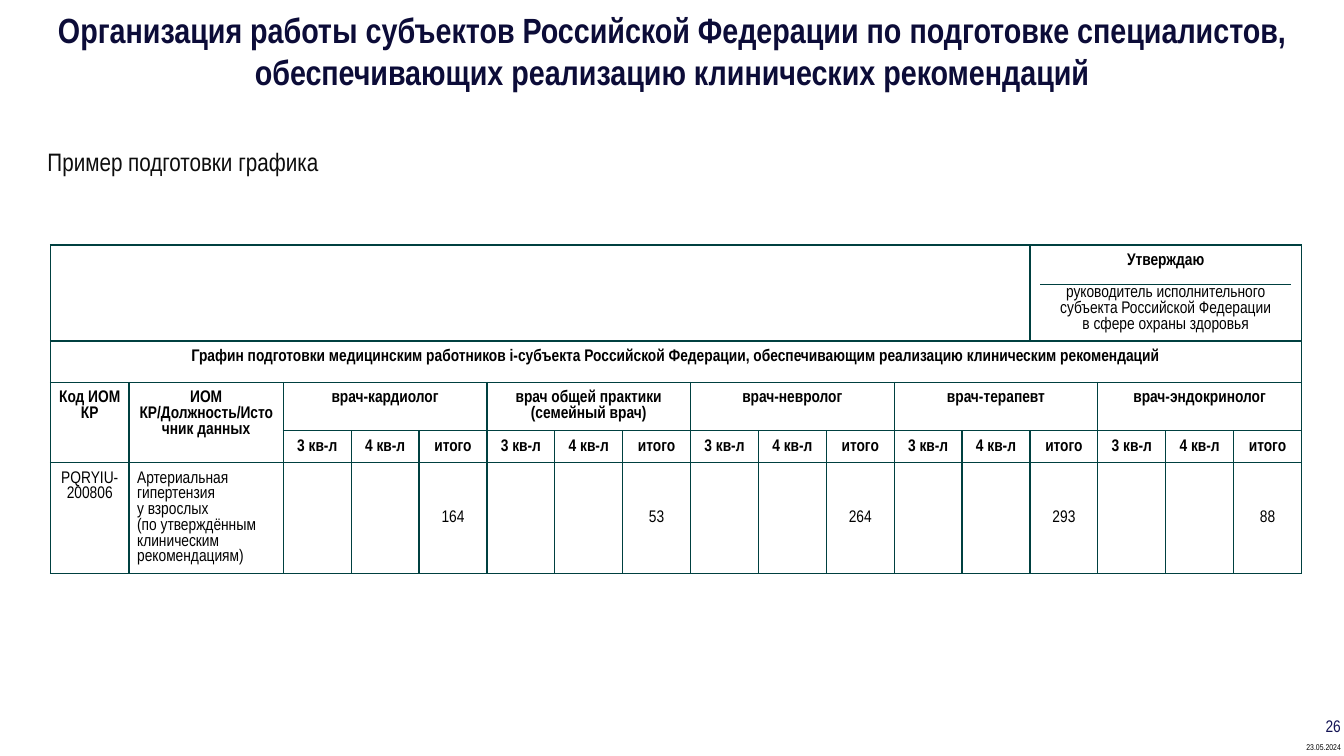
import dataclasses
import typing

import lxml.etree
import pptx
import pptx.dml.color
import pptx.enum.shapes
import pptx.enum.text
import pptx.oxml
import pptx.oxml.ns
import pptx.util

Inches = pptx.util.Inches
Align = pptx.enum.text.PP_ALIGN
Anchor = pptx.enum.text.MSO_ANCHOR

FONT = "Arial Narrow"
COLORS = {
    "title": "0C0C38",
    "subtitle": "0D0D0D",
    "number": "131354",
    "text": "000000",
    "border": "004040",
}
NO_BREAK = chr(160)
INSET = 0.08
TABLE_LEFT, TABLE_TOP, TABLE_WIDTH = 0.5, 2.43, 12.41
LABEL_WIDTHS = [0.78, 1.53]
ROW_HEIGHTS = [0.95, 0.41, 0.48, 0.31, 1.1]
QUARTERS = [f"3{NO_BREAK}кв‑л", f"4{NO_BREAK}кв‑л", "итого"]
APPROVAL_COLUMN = 13


@dataclasses.dataclass
class Specialist:
    name: str
    total: int


@dataclasses.dataclass
class Cell:
    row: int
    column: int
    text: str
    bold: bool = True
    row_span: int = 1
    column_span: int = 1
    align: typing.Any = Align.CENTER
    anchor: typing.Any = Anchor.TOP


@dataclasses.dataclass
class Label:
    text: str
    left: float
    top: float
    width: float
    height: float
    size: float
    color: str
    align: typing.Any
    insets: tuple[float, float, float, float]
    anchor: typing.Any = Anchor.MIDDLE
    bold: bool = False
    wrap: bool = True


SPECIALISTS = [
    Specialist("врач-кардиолог", 164),
    Specialist("врач общей практики (семейный врач)", 53),
    Specialist("врач-невролог", 264),
    Specialist("врач-терапевт", 293),
    Specialist("врач-эндокринолог", 88),
]
COLUMN_COUNT = len(LABEL_WIDTHS) + len(SPECIALISTS) * len(QUARTERS)
TITLE = Label(
    f"Организация работы субъектов Российской Федерации по{NO_BREAK}подготовке специалистов, "
    "обеспечивающих реализацию клинических рекомендаций",
    0.17, 0, 12.99, 1, 25, "title", Align.CENTER, (INSET,) * 4, bold=True,
)
LABELS = [
    Label("23.05.2024", 12.91, 7.32, 0.43, 0.18, 6, "text", Align.RIGHT,
          (0.04,) * 4, Anchor.TOP, wrap=False),
    Label("26", 12.91, 7.06, 0.43, 0.24, 12, "number", Align.RIGHT, (0.04, 0.04, 0.04, 0)),
    Label("Пример подготовки графика", 0.39, 1.37, 6.28, 0.46, 18, "subtitle",
          Align.LEFT, (INSET,) * 4),
]


def rgb(name: str) -> pptx.dml.color.RGBColor:
    return pptx.dml.color.RGBColor.from_string(COLORS[name])


def add_run(paragraph: typing.Any, text: str, size: float, color: str, bold: bool) -> None:
    run = paragraph.add_run()
    run.text = text
    run.font.name = FONT
    run.font.size = pptx.util.Pt(size)
    run.font.bold = bold
    run.font.color.rgb = rgb(color)


def fill_label(shape: typing.Any, label: Label) -> None:
    shape.left, shape.top = Inches(label.left), Inches(label.top)
    shape.width, shape.height = Inches(label.width), Inches(label.height)
    frame = shape.text_frame
    frame.auto_size = pptx.enum.text.MSO_AUTO_SIZE.NONE
    frame.word_wrap = label.wrap
    frame.vertical_anchor = label.anchor
    left, top, right, bottom = map(Inches, label.insets)
    frame.margin_left, frame.margin_top = left, top
    frame.margin_right, frame.margin_bottom = right, bottom
    paragraph = frame.paragraphs[0]
    paragraph.alignment = label.align
    add_run(paragraph, label.text, label.size, label.color, label.bold)


def table_cells() -> list[Cell]:
    cells = [
        Cell(0, 0, "", column_span=APPROVAL_COLUMN),
        Cell(1, 0, "Графин подготовки медицинским работников i-субъекта Российской Федерации, "
                   "обеспечивающим реализацию клиническим рекомендаций",
             column_span=COLUMN_COUNT),
        Cell(2, 0, "Код ИОМ КР", row_span=2),
        Cell(2, 1, "ИОМ КР/Должность/Источник данных", row_span=2),
        Cell(4, 0, "PQRYIU‑200806", bold=False),
        Cell(4, 1, f"Артериальная гипертензия у{NO_BREAK}взрослых "
                   f"(по{NO_BREAK}утверждённым клиническим рекомендациям)",
             bold=False, align=Align.LEFT),
    ]
    for index, specialist in enumerate(SPECIALISTS):
        first = len(LABEL_WIDTHS) + index * len(QUARTERS)
        cells.append(Cell(2, first, specialist.name, column_span=len(QUARTERS)))
        cells += [Cell(3, first + offset, name) for offset, name in enumerate(QUARTERS)]
        cells.append(Cell(4, first + len(QUARTERS) - 1, str(specialist.total),
                          bold=False, anchor=Anchor.MIDDLE))
    return cells


def add_borders(table_cell: typing.Any) -> None:
    properties = table_cell._tc.get_or_add_tcPr()
    for side in ("lnL", "lnR", "lnT", "lnB"):
        properties.append(pptx.oxml.parse_xml(
            f'<a:{side} {pptx.oxml.ns.nsdecls("a")} w="12700"><a:solidFill>'
            f'<a:srgbClr val="{COLORS["border"]}"/></a:solidFill></a:{side}>'
        ))


def write_paragraph(paragraph: typing.Any, text: str, align: typing.Any, bold: bool) -> None:
    paragraph.alignment = align
    add_run(paragraph, text, 12, "text", bold)


def add_schedule(slide: typing.Any) -> None:
    frame = slide.shapes.add_table(
        len(ROW_HEIGHTS), COLUMN_COUNT, Inches(TABLE_LEFT), Inches(TABLE_TOP),
        Inches(TABLE_WIDTH), Inches(sum(ROW_HEIGHTS)),
    )
    table = frame.table
    table.first_row = table.horz_banding = False
    quarter_count = COLUMN_COUNT - len(LABEL_WIDTHS)
    quarter_width = (TABLE_WIDTH - sum(LABEL_WIDTHS)) / quarter_count
    for column, width in zip(table.columns, LABEL_WIDTHS + [quarter_width] * quarter_count):
        column.width = Inches(width)
    for row, height in zip(table.rows, ROW_HEIGHTS):
        row.height = Inches(height)
    for table_cell in table.iter_cells():
        table_cell.margin_left = table_cell.margin_right = Inches(INSET)
        table_cell.margin_top = table_cell.margin_bottom = Inches(INSET)
        add_borders(table_cell)
        table_cell.fill.background()
    approval = Cell(0, APPROVAL_COLUMN, "Утверждаю", column_span=COLUMN_COUNT - APPROVAL_COLUMN)
    for cell in table_cells() + [approval]:
        table_cell = table.cell(cell.row, cell.column)
        if cell.row_span * cell.column_span > 1:
            table_cell.merge(table.cell(cell.row + cell.row_span - 1,
                                        cell.column + cell.column_span - 1))
        table_cell.vertical_anchor = cell.anchor
        if cell.text:
            write_paragraph(table_cell.text_frame.paragraphs[0], cell.text, cell.align, cell.bold)
    approval_text = table.cell(0, APPROVAL_COLUMN).text_frame
    approval_text.paragraphs[0].space_after = pptx.util.Pt(12)
    write_paragraph(
        approval_text.add_paragraph(),
        "руководитель исполнительного субъекта Российской Федерации "
        f"в{NO_BREAK}сфере охраны здоровья",
        Align.CENTER, False,
    )


def add_signature_line(slide: typing.Any) -> None:
    line = slide.shapes.add_connector(
        pptx.enum.shapes.MSO_CONNECTOR.STRAIGHT,
        Inches(10.32), Inches(2.82), Inches(12.8), Inches(2.82),
    )
    line.line.color.rgb = rgb("border")
    line.line.width = pptx.util.Pt(1)
    lxml.etree.SubElement(line._element.spPr, pptx.oxml.ns.qn("a:effectLst"))


def main() -> None:
    presentation = pptx.Presentation()
    presentation.slide_width, presentation.slide_height = Inches(13.33), Inches(7.5)
    slide = presentation.slides.add_slide(presentation.slide_layouts[5])
    fill_label(slide.shapes.title, TITLE)
    add_schedule(slide)
    for label in LABELS:
        fill_label(slide.shapes.add_textbox(0, 0, 0, 0), label)
    add_signature_line(slide)
    presentation.save("out.pptx")


if __name__ == "__main__":
    main()
